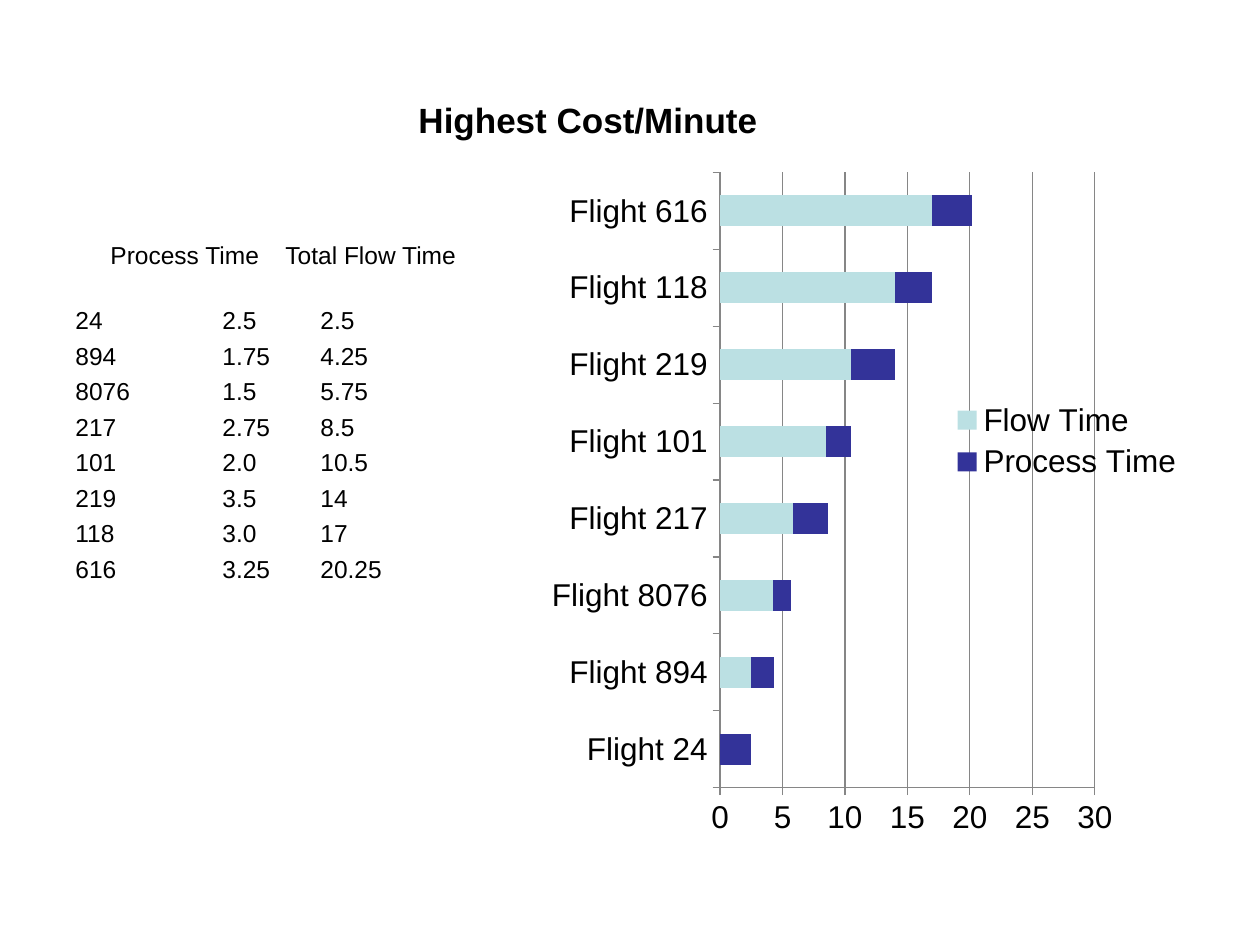
"""Build a slide that lists flight process times beside a stacked flow time chart."""
from lxml import etree
from pptx import Presentation
from pptx.chart.data import CategoryChartData
from pptx.dml.color import RGBColor
from pptx.enum.chart import XL_CHART_TYPE, XL_LEGEND_POSITION, XL_TICK_MARK
from pptx.enum.text import MSO_ANCHOR, PP_ALIGN
from pptx.oxml import parse_xml
from pptx.oxml.ns import nsdecls, qn
from pptx.util import Pt

STACKED_BARS = XL_CHART_TYPE.BAR_STACKED
LEGEND_RIGHT = XL_LEGEND_POSITION.RIGHT
TICK_OUTSIDE = XL_TICK_MARK.OUTSIDE
ANCHOR_BOTTOM = MSO_ANCHOR.BOTTOM
ALIGN_CENTER = PP_ALIGN.CENTER
BLACK = RGBColor(0, 0, 0)
GRAY = RGBColor(0x86, 0x86, 0x86)
PALE_TEAL = RGBColor(0xBB, 0xE0, 0xE3)
NAVY = RGBColor(0x33, 0x33, 0x99)

HEADER = ("", "Process Time", "Total Flow Time")
FLIGHTS = [
    ("24", "2.5", "2.5"),
    ("894", "1.75", "4.25"),
    ("8076", "1.5", "5.75"),
    ("217", "2.75", "8.5"),
    ("101", "2.0", "10.5"),
    ("219", "3.5", "14"),
    ("118", "3.0", "17"),
    ("616", "3.25", "20.25"),
]
SERIES = [
    ("Flow Time", (0, 2.5, 4.2, 5.8, 8.5, 10.5, 14, 17), PALE_TEAL),
    ("Process Time", (2.5, 1.8, 1.5, 2.8, 2, 3.5, 3, 3.2), NAVY),
]
HEADER_STOPS = (20, 120)
ROW_STOPS = (84, 140)
PLOT_AREA = {"x": 0.323, "y": 0.167, "w": 0.532, "h": 0.763}


def style_font(font, size, bold=False):
    for name, value in {"name": "Arial", "size": Pt(size), "bold": bold}.items():
        setattr(font, name, value)
    font.color.rgb = BLACK


deck = Presentation()
deck.slide_width, deck.slide_height = Pt(720), Pt(540)
page = deck.slides.add_slide(deck.slide_layouts[5])

title = page.shapes.title
title_place = {"left": 36, "top": 21.6, "width": 600, "height": 62.6}
for name, value in title_place.items():
    setattr(title, name, Pt(value))
title.text_frame.text = "Highest Cost/Minute"
title.text_frame.vertical_anchor = ANCHOR_BOTTOM
title_para = title.text_frame.paragraphs[0]
title_para.alignment = ALIGN_CENTER
style_font(title_para.runs[0].font, 20, True)

chart_data = CategoryChartData()
chart_data.categories = [f"Flight {number}" for number, *times in FLIGHTS]
for name, values, color in SERIES:
    chart_data.add_series(name, values)
chart = page.shapes.add_chart(
    STACKED_BARS, Pt(281.5), Pt(21.6), Pt(402.5), Pt(460.8), chart_data
).chart
style_font(chart.font, 18)
chart.has_title = False
chart.has_legend = True
chart.legend.position = LEGEND_RIGHT
chart.legend.include_in_layout = False

bars = chart.plots[0]
for name, value in {"gap_width": 150, "overlap": 100, "vary_by_categories": False}.items():
    setattr(bars, name, value)
for series, (name, values, color) in zip(bars.series, SERIES):
    series.format.fill.solid()
    series.format.fill.fore_color.rgb = color

value_axis = chart.value_axis
value_format = {
    "minimum_scale": 0,
    "maximum_scale": 30,
    "major_unit": 5,
    "has_major_gridlines": True,
}
for name, value in value_format.items():
    setattr(value_axis, name, value)
for axis in (chart.category_axis, value_axis):
    axis.major_tick_mark = TICK_OUTSIDE
for line in (
    chart.category_axis.format.line,
    value_axis.format.line,
    value_axis.major_gridlines.format.line,
):
    line.color.rgb = GRAY
    line.width = Pt(0.75)

plot_area = bars._element.getparent()
for old_layout in plot_area.findall(qn("c:layout")):
    plot_area.remove(old_layout)
sizes = "".join(f'<c:{key} val="{share}"/>' for key, share in PLOT_AREA.items())
plot_area.insert(0, parse_xml(
    f'<c:layout {nsdecls("c")}><c:manualLayout><c:layoutTarget val="inner"/>'
    f'<c:xMode val="edge"/><c:yMode val="edge"/>{sizes}</c:manualLayout></c:layout>'
))

box = page.shapes.add_textbox(Pt(36), Pt(113), Pt(237), Pt(369.4))
frame = box.text_frame
frame.word_wrap = True
frame.margin_top = Pt(24)
for index, cells in enumerate([HEADER, *FLIGHTS]):
    para = frame.add_paragraph() if index else frame.paragraphs[0]
    para.space_before = Pt((0, 20.5)[index] if index < 2 else 3.5)
    span = para.add_run()
    span.text = "\t".join(cells)
    style_font(span.font, 14)
    tab_list = etree.SubElement(para._p.get_or_add_pPr(), qn("a:tabLst"))
    for stop in ROW_STOPS if index else HEADER_STOPS:
        etree.SubElement(tab_list, qn("a:tab"), pos=str(Pt(stop)), algn="l")

deck.save("out.pptx")
